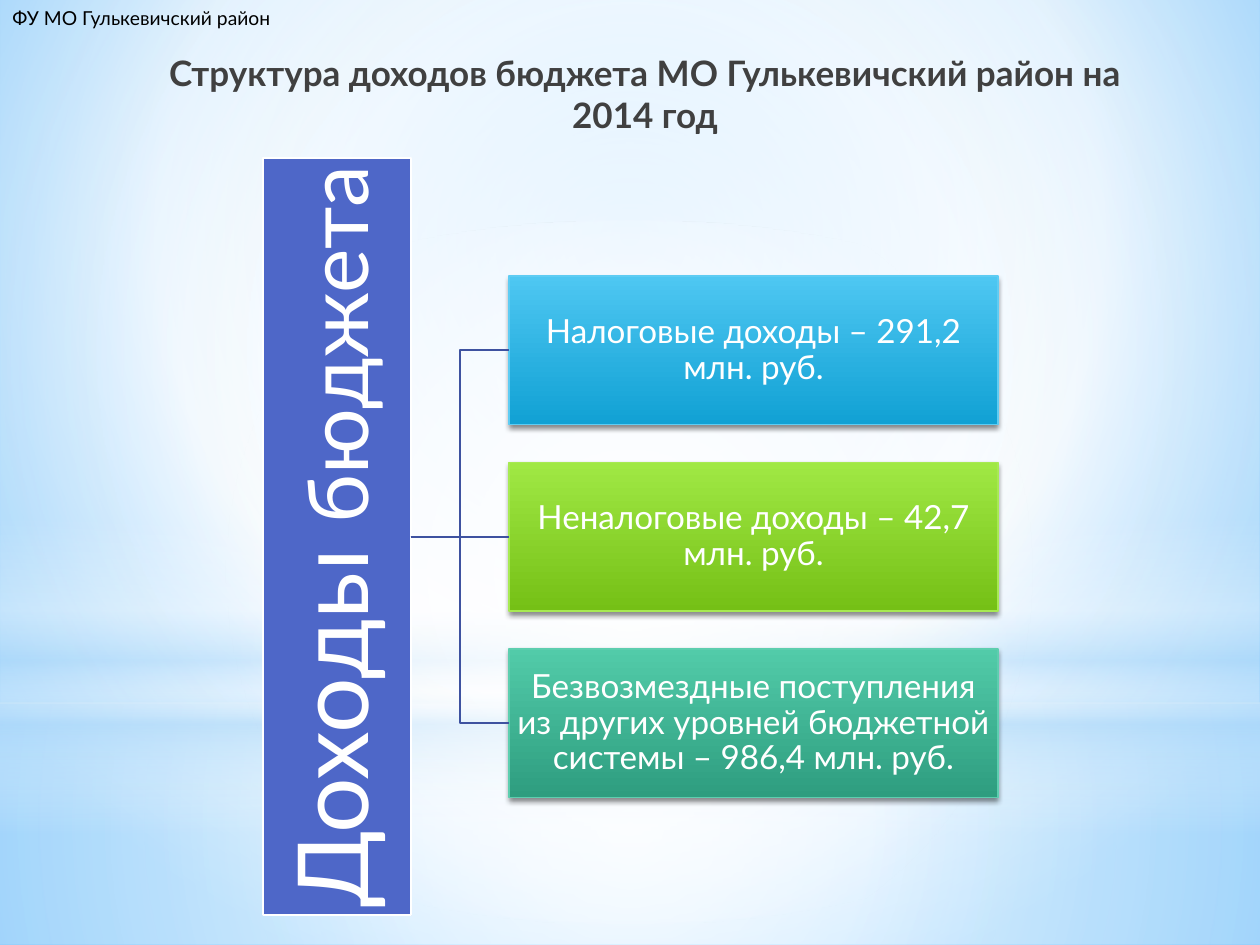
from dataclasses import dataclass

from lxml import etree
from pptx import Presentation
from pptx.dml.color import RGBColor
from pptx.enum.shapes import MSO_CONNECTOR, MSO_SHAPE
from pptx.enum.text import MSO_ANCHOR, PP_ALIGN
from pptx.oxml.ns import qn
from pptx.util import Pt

SCALE = 9144
RECT, OVAL = MSO_SHAPE.RECTANGLE, MSO_SHAPE.OVAL
LINE, ELBOW = MSO_CONNECTOR.STRAIGHT, MSO_CONNECTOR.ELBOW
CENTER, LEFT = PP_ALIGN.CENTER, PP_ALIGN.LEFT
TOP, MIDDLE = MSO_ANCHOR.TOP, MSO_ANCHOR.MIDDLE
FONT = "Lato"
WHITE, PALE, INK = "FFFFFF", "B4DCFA", "3E52A0"
MID = (50, 50, 50, 50)
BOX_X, BOX_Y, BOX_W, BOX_H, STEP = 404, 219, 388, 118, 148
BAR_LEN = 601
BAR_X, BAR_Y = -33, BOX_Y + STEP
STEM = 326


@dataclass
class Glow:
    kind: int
    area: tuple
    stops: list
    focus: tuple | None = MID


@dataclass
class Item:
    text: str
    light: str
    dark: str
    edge: str


GLOWS = [
    Glow(RECT, (0, 558, 1000, 192),
         [(0, WHITE, 91), (37, WHITE, 76), (100, PALE, 79)]),
    Glow(RECT, (0, 0, 1000, 558),
         [(0, WHITE, 89), (48, WHITE, 62), (100, PALE, 79)]),
    Glow(RECT, (0, 412, 1000, 250),
         [(0, WHITE, 0), (29, WHITE, 30), (45, PALE, 40),
          (55, WHITE, 26), (65, PALE, 60), (100, WHITE, 0)], None),
    Glow(OVAL, (0, 175, 1000, 558), [(0, WHITE, 100), (56, WHITE, 0)]),
]
ITEMS = [
    Item("Налоговые доходы – 291,2 млн. руб.", "4EC7F2", "11A1D4", "5ECCF3"),
    Item("Неналоговые доходы – 42,7 млн. руб.", "A0E844", "75C016", "A7EA52"),
    Item("Безвозмездные поступления из других уровней бюджетной "
         "системы – 986,4 млн. руб.", "52CBA9", "2E9D7F", "5DCEAF"),
]


def px(n: int) -> int:
    return n * SCALE


def color(code: str) -> RGBColor:
    return RGBColor.from_string(code)


def apply(target, values: dict) -> None:
    for name, value in values.items():
        setattr(target, name, value)


def add(node, tag: str, **attrs):
    values = {name: str(value) for name, value in attrs.items()}
    return etree.SubElement(node, qn(tag), values)


def blend(fill, owner, stops: list, focus: tuple | None = None) -> None:
    fill.gradient()
    grad = owner.find(".//" + qn("a:gradFill"))
    for child in list(grad):
        grad.remove(child)
    group = add(grad, "a:gsLst")
    for place, code, alpha in stops:
        stop = add(group, "a:gs", pos=place * 1000)
        tint = add(stop, "a:srgbClr", val=code)
        if alpha < 100:
            add(tint, "a:alpha", val=alpha * 1000)
    if focus:
        route = add(grad, "a:path", path="circle")
        sides = {side: n * 1000 for side, n in zip("ltrb", focus)}
        add(route, "a:fillToRect", **sides)
    else:
        add(grad, "a:lin", ang=5400000, scaled=0)


def block(slide, kind: int, area: tuple):
    shape = slide.shapes.add_shape(kind, *map(px, area))
    shape.shadow.inherit = False
    return shape


def edge(line, code: str, width: float) -> None:
    line.color.rgb = color(code)
    line.width = Pt(width)


def write(shape, runs: list, code: str, pad: int = 10, bold: bool = False,
          align: int = CENTER, anchor: int = MIDDLE, wrap: bool = True,
          space: float = 1.0) -> None:
    frame = shape.text_frame
    apply(frame, {"word_wrap": wrap, "vertical_anchor": anchor,
                  "margin_left": px(pad), "margin_right": px(pad),
                  "margin_top": px(min(pad, 5)),
                  "margin_bottom": px(min(pad, 5))})
    para = frame.paragraphs[0]
    apply(para, {"alignment": align, "line_spacing": space})
    for text, size in runs:
        run = para.add_run()
        run.text = text
        apply(run.font, {"name": FONT, "size": Pt(size), "bold": bold})
        run.font.color.rgb = color(code)


def glow(slide, part: Glow) -> None:
    shape = block(slide, part.kind, part.area)
    shape.line.fill.background()
    blend(shape.fill, shape.element, part.stops, part.focus)


def label(slide, area: tuple, text: str, size: int, code: str, **look) -> None:
    box = slide.shapes.add_textbox(*map(px, area))
    write(box, [(text, size)], code, **look)


def card(slide, item: Item, top: int):
    shape = block(slide, RECT, (BOX_X, top, BOX_W, BOX_H))
    blend(shape.fill, shape.element,
          [(0, item.light, 100), (100, item.dark, 100)])
    edge(shape.line, item.edge, 0.75)
    effect = shape.element.spPr.find(qn("a:effectLst"))
    shade = add(effect, "a:outerShdw", blurRad=Pt(3.1), dist=Pt(1.8),
                dir=5400000, algn="ctr", rotWithShape=0)
    add(add(shade, "a:srgbClr", val="000000"), "a:alpha", val=45000)
    write(shape, [(item.text, 19)], WHITE, pad=1, space=0.9)
    return shape


def link(slide, bar, box, start: int, end: int) -> None:
    kind = LINE if start == end else ELBOW
    ends = (STEM, start, BOX_X, end)
    wire = slide.shapes.add_connector(kind, *map(px, ends))
    if kind == LINE:
        wire.begin_connect(bar, 2)
        wire.end_connect(box, 1)
        apply(wire, {"begin_x": px(STEM), "begin_y": px(start)})
    edge(wire.line, INK, 1.25)
    add(wire.element.spPr, "a:effectLst")


def main() -> None:
    deck = Presentation()
    apply(deck, {"slide_width": px(1000), "slide_height": px(750)})
    slide = deck.slides.add_slide(deck.slide_layouts[6])
    blend(slide.background.fill, slide.element,
          [(0, "9ED5FF", 100), (60, WHITE, 100), (100, "5BB9FF", 100)],
          (20, 10, 20, 60))
    for part in GLOWS:
        glow(slide, part)
    label(slide, (122, 36, 780, 84),
          "Структура доходов бюджета МО Гулькевичский район на 2014 год",
          20, "404040", bold=True, anchor=TOP)

    bar = block(slide, RECT, (BAR_X, BAR_Y, BAR_LEN, BOX_H))
    bar.rotation = 270
    bar.fill.solid()
    bar.fill.fore_color.rgb = color("4E67C8")
    edge(bar.line, WHITE, 1.25)
    write(bar, [("Доходы ", 56), ("бюджета", 48)], WHITE, pad=4, space=0.9)

    hub = BAR_Y + BOX_H // 2
    for row, item in enumerate(ITEMS):
        top = BOX_Y + row * STEP
        box = card(slide, item, top)
        link(slide, bar, box, hub, top + BOX_H // 2)

    label(slide, (0, 0, 225, 29), "ФУ МО Гулькевичский район", 11, "000000",
          align=LEFT, anchor=TOP, wrap=False)
    deck.save("out.pptx")


if __name__ == "__main__":
    main()
